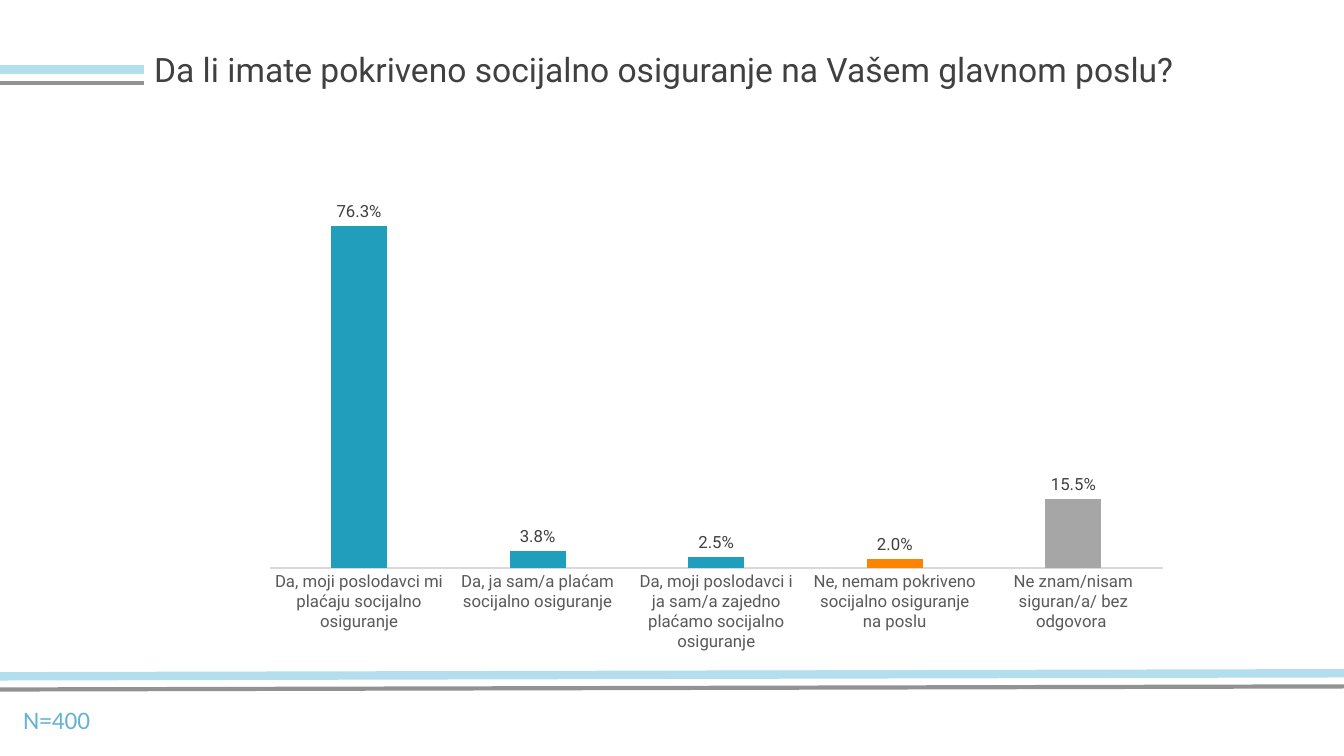
import pptx
import pptx.chart.data
import pptx.dml.color
import pptx.enum.chart
import pptx.enum.shapes
import pptx.enum.text
import pptx.oxml
import pptx.oxml.ns
import pptx.util
import lxml.etree

Pt = pptx.util.Pt
WIDTH, HEIGHT = 960, 540
BLUE, GREY = "B2DEED", "929294"


def rgb(value):
    return pptx.dml.color.RGBColor.from_string(value)


def apply(target, formats):
    for attribute, value in formats.items():
        setattr(target, attribute, value)


class SurveySlide:
    font_name = "Roboto"

    def __init__(self, slide):
        self.slide = slide

    def style(self, font, size, color, name=None):
        apply(font, {"name": name or self.font_name, "size": Pt(size)})
        font.color.rgb = rgb(color)

    def text(self, content, box, size, color, name=None):
        frame = self.slide.shapes.add_textbox(*map(Pt, box)).text_frame
        apply(frame, {
            "word_wrap": True,
            "auto_size": pptx.enum.text.MSO_AUTO_SIZE.SHAPE_TO_FIT_TEXT,
        })
        run = frame.paragraphs[0].add_run()
        run.text = content
        self.style(run.font, size, color, name)

    def rule(self, start, end, color, weight):
        rule = self.slide.shapes.add_connector(
            pptx.enum.shapes.MSO_CONNECTOR.STRAIGHT, *map(Pt, start + end))
        rule.line.color.rgb = rgb(color)
        rule.line.width = Pt(weight)
        lxml.etree.SubElement(rule._element.spPr, pptx.oxml.ns.qn("a:effectLst"))

    def double_rule(self, length, top, rise=0):
        for offset, color, weight in ((9.4, GREY, 3), (0, BLUE, 6)):
            y = top + offset
            self.rule((0, y), (length, y - rise), color, weight)

    def column_chart(self, answers, box, color, highlights, layout):
        data = pptx.chart.data.CategoryChartData(number_format="0.0%")
        data.categories = list(answers)
        data.add_series("Series 1", list(answers.values()))
        chart = self.slide.shapes.add_chart(
            pptx.enum.chart.XL_CHART_TYPE.COLUMN_CLUSTERED, *map(Pt, box), data).chart
        apply(chart, {"has_legend": False, "has_title": False})
        self.style(chart.font, 12, "000000")

        plot = chart.plots[0]
        apply(plot, {"gap_width": 219, "overlap": -27, "vary_by_categories": False,
                     "has_data_labels": True})
        series = plot.series[0]
        series.invert_if_negative = False
        fills = [(series, color)]
        fills += [(series.points[i], shade) for i, shade in highlights.items()]
        for part, shade in fills:
            part.format.fill.solid()
            part.format.fill.fore_color.rgb = rgb(shade)

        labels = plot.data_labels
        apply(labels, {
            "show_value": True,
            "number_format": "0.0%",
            "number_format_is_linked": False,
            "position": pptx.enum.chart.XL_LABEL_POSITION.OUTSIDE_END,
        })
        self.style(labels.font, 12, "404040")

        no_tick = pptx.enum.chart.XL_TICK_MARK.NONE
        answer_axis, share_axis = chart.category_axis, chart.value_axis
        apply(answer_axis, {"major_tick_mark": no_tick, "minor_tick_mark": no_tick,
                            "has_major_gridlines": False})
        self.style(answer_axis.tick_labels.font, 12, "595959")
        answer_axis.format.line.color.rgb = rgb("D9D9D9")
        answer_axis.format.line.width = Pt(0.75)
        apply(share_axis, {"minimum_scale": 0, "maximum_scale": 1,
                           "has_major_gridlines": False, "visible": False})
        apply(share_axis.tick_labels, {"number_format": "0.0%",
                                       "number_format_is_linked": False})
        self.place_plot(chart, layout)

    def place_plot(self, chart, layout):
        modes = {"layoutTarget": "inner", "xMode": "edge", "yMode": "edge"}
        settings = "".join(f'<c:{tag} val="{value}"/>'
                           for tag, value in (modes | layout).items())
        area = chart._chartSpace.chart.plotArea
        for previous in area.findall(pptx.oxml.ns.qn("c:layout")):
            area.remove(previous)
        area.insert(0, pptx.oxml.parse_xml(
            f'<c:layout {pptx.oxml.ns.nsdecls("c")}>'
            f'<c:manualLayout>{settings}</c:manualLayout></c:layout>'))


def main():
    presentation = pptx.Presentation()
    apply(presentation, {"slide_width": Pt(WIDTH), "slide_height": Pt(HEIGHT)})
    survey = SurveySlide(presentation.slides.add_slide(presentation.slide_layouts[6]))

    survey.text("Da li imate pokriveno socijalno osiguranje na Vašem glavnom poslu?",
                (103, 31.7, 770.4, 36), 24, "404040")
    survey.double_rule(WIDTH, 483.1, rise=2.2)
    survey.double_rule(103, 49.7)
    survey.text("N=400", (9.4, 499.7, 75.6, 28.8), 18, "64B3D3", "Calibri")

    answers = {
        "Da, moji poslodavci mi plaćaju socijalno osiguranje": 0.763,
        "Da, ja sam/a plaćam socijalno osiguranje": 0.038,
        "Da, moji poslodavci i ja sam/a zajedno plaćamo socijalno osiguranje": 0.025,
        "Ne, nemam pokriveno socijalno osiguranje na poslu": 0.02,
        "Ne znam/nisam siguran/a/ bez odgovora ": 0.155,
    }
    survey.column_chart(answers, (129.6, 85.7, 701.3, 410.4), "219EBC",
                        {3: "FB8500", 4: "A6A6A6"},
                        {"x": 0.09, "y": 0, "w": 0.91, "h": 0.78})
    presentation.save("out.pptx")


if __name__ == "__main__":
    main()
